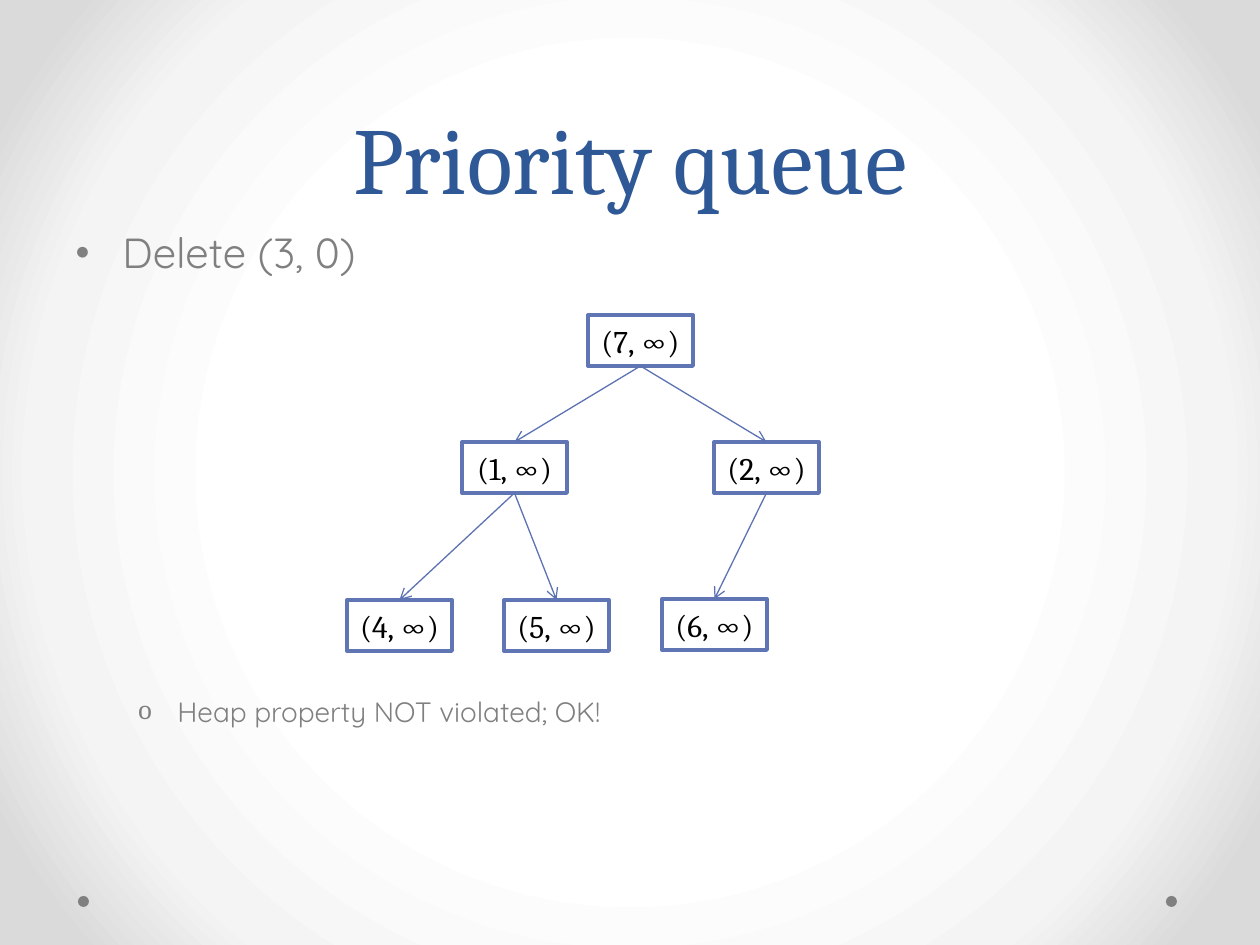
from lxml import etree
from pptx import Presentation
from pptx.dml.color import RGBColor
from pptx.enum.shapes import MSO_CONNECTOR, MSO_SHAPE
from pptx.enum.text import MSO_ANCHOR, PP_ALIGN
from pptx.oxml import parse_xml
from pptx.oxml.ns import qn
from pptx.util import Pt

PX = 914400 / 126
RECT, OVAL = MSO_SHAPE.RECTANGLE, MSO_SHAPE.OVAL
STRAIGHT = MSO_CONNECTOR.STRAIGHT
CENTER, LEFT = PP_ALIGN.CENTER, PP_ALIGN.LEFT
TOP, MIDDLE, BOTTOM = MSO_ANCHOR.TOP, MSO_ANCHOR.MIDDLE, MSO_ANCHOR.BOTTOM
GREY = "808080"


def px(*lengths):
    return [round(length * PX) for length in lengths]


def write(box, text, font, size, color, align, anchor, wrap, bullet=None):
    frame = box.text_frame
    for name, value in {"word_wrap": wrap, "vertical_anchor": anchor}.items():
        setattr(frame, name, value)
    para = frame.paragraphs[0]
    para.alignment = align
    if bullet:
        mark, mark_font, margin, indent = bullet
        props = para._p.get_or_add_pPr()
        for name, length in {"marL": margin, "indent": indent}.items():
            props.set(name, str(px(length)[0]))
        etree.SubElement(props, qn("a:buFont")).set("typeface", mark_font)
        etree.SubElement(props, qn("a:buChar")).set("char", mark)
    span = para.add_run()
    span.text = text
    for name, value in {"name": font, "size": Pt(size)}.items():
        setattr(span.font, name, value)
    span.font.color.rgb = RGBColor.from_string(color)
    return para


deck = Presentation()
deck.slide_width, deck.slide_height = px(1260, 945)
page = deck.slides.add_slide(deck.slide_layouts[6])

# Background: radial gradient, white in the middle
page.background.fill.solid()
stops = "".join(
    f'<a:gs pos="{place * 1000}"><a:srgbClr val="{color}"/></a:gs>'
    for place, color in [(50, "FFFFFF"), (76, "F4F4F4"), (92, "DADADA")])
gradient = parse_xml(
    '<a:gradFill xmlns:a="http://schemas.openxmlformats.org/drawingml/2006/main" rotWithShape="1">'
    f'<a:gsLst>{stops}</a:gsLst><a:path path="circle">'
    '<a:fillToRect l="50000" t="50000" r="50000" b="50000"/></a:path></a:gradFill>')
solid = next(page._element.iter(qn("a:solidFill")))
solid.getparent().replace(solid, gradient)

# Corner dots
for left in (1166, 78):
    dot = page.shapes.add_shape(OVAL, *px(left, 896, 11, 11))
    dot.shadow.inherit = False
    dot.fill.solid()
    dot.fill.fore_color.rgb = RGBColor.from_string(GREY)
    dot.line.fill.background()

# Title and bullets
title = page.shapes.add_textbox(*px(63, 0, 1134, 220))
write(title, "Priority queue", "Cambria", 54, "2F5897", CENTER, BOTTOM, True).line_spacing = Pt(58)
for top, height, text, size, bullet in [
        (220, 66, "Delete (3, 0)", 24, ("•", "Quicksand", 47, -47)),
        (688, 48, "Heap property NOT violated; OK!", 16, ("o", "Cambria", 102, -39))]:
    box = page.shapes.add_textbox(*px(63, top, 1134, height))
    write(box, text, "Quicksand", size, GREY, LEFT, TOP, True, bullet)

# Heap nodes: key -> left, top
nodes = {}
for key, (left, top) in {1: (462, 442), 2: (714, 442), 4: (347, 600),
                         6: (662, 599), 5: (504, 600), 7: (588, 315)}.items():
    node = page.shapes.add_shape(RECT, *px(left, top, 105, 51))
    node.shadow.inherit = False
    node.fill.solid()
    node.fill.fore_color.rgb = RGBColor.from_string("FFFFFF")
    node.line.color.rgb = RGBColor.from_string("6076B4")
    node.line.width = Pt(2.25)
    write(node, f"({key}, ∞)", "Cambria", 18, "000000", CENTER, MIDDLE, False)
    nodes[key] = node

# Arrows from parent to child
for parent, child in [(7, 1), (1, 4), (7, 2), (2, 6), (1, 5)]:
    arrow = page.shapes.add_connector(STRAIGHT, 0, 0, 0, 0)
    arrow.begin_connect(nodes[parent], 2)
    arrow.end_connect(nodes[child], 0)
    arrow.line.color.rgb = RGBColor.from_string("5C72B2")
    arrow.line.width = Pt(0.75)
    etree.SubElement(arrow.line._get_or_add_ln(), qn("a:tailEnd")).set("type", "arrow")
    etree.SubElement(arrow._element.spPr, qn("a:effectLst"))

deck.save("out.pptx")
